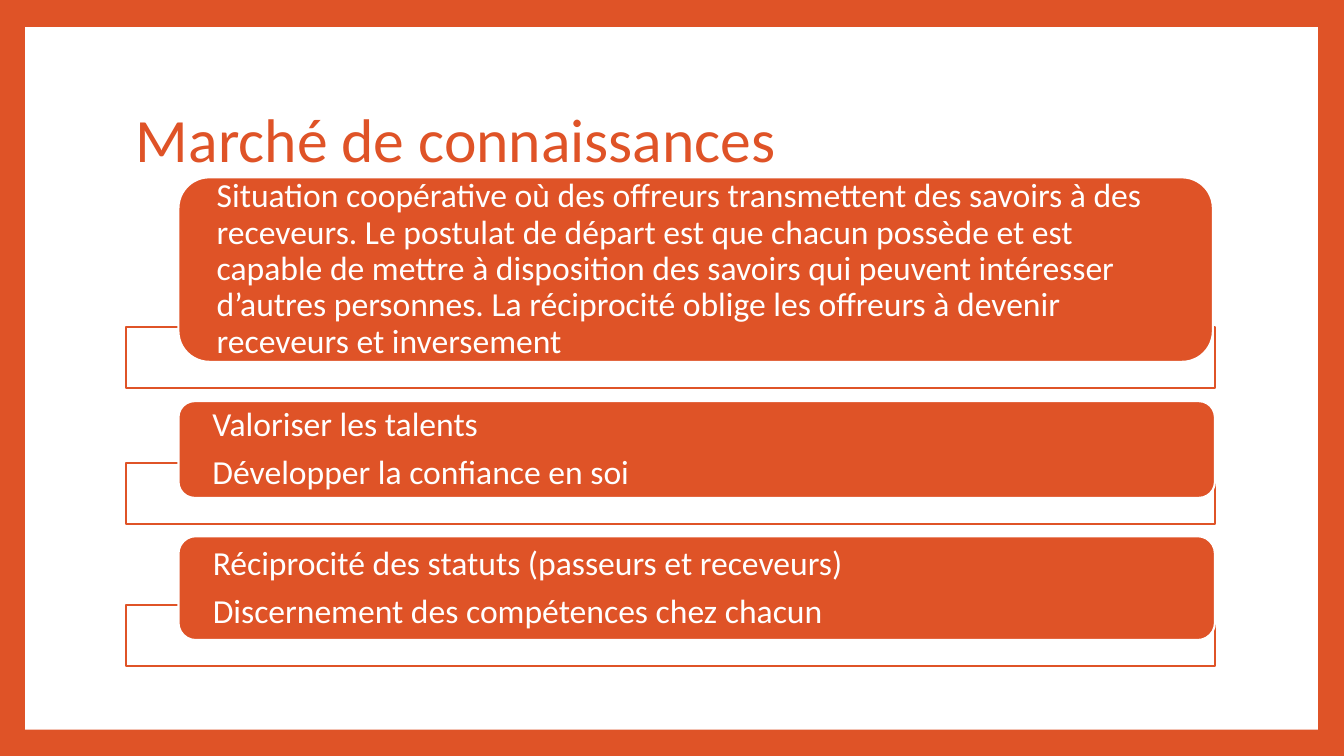
from lxml import etree
from pptx import Presentation
from pptx import util as u
from pptx.dml.color import RGBColor
from pptx.enum import shapes, text
from pptx.oxml.ns import qn

WIDTH, HEIGHT = 13.33, 7.5
ORANGE, WHITE = "DF5327", "FFFFFF"
FONT = "Calibri"
LEFT, CONTENT_WIDTH = 1.25, 10.8
CARD_LEFT = 1.77
TRAY_HEIGHT = 0.61
TRAY_DROP = 0.26  # how far each tray reaches below its card

# Card top, height, width and paragraphs
CARDS = [
    (1.76, 1.83, 10.26, [
        "Situation coopérative où des offreurs transmettent des savoirs à des "
        "receveurs. Le postulat de départ est que chacun possède et est "
        "capable de mettre à disposition des savoirs qui peuvent intéresser "
        "d’autres personnes. La réciprocité oblige les offreurs à devenir "
        "receveurs et inversement"]),
    (3.98, 0.96, 10.28, ["Valoriser les talents",
                         "Développer la confiance en soi"]),
    (5.32, 1.03, 10.28, ["Réciprocité des statuts (passeurs et receveurs)",
                         "Discernement des compétences chez chacun"]),
]


def color(value):
    return RGBColor.from_string(value)


def paint(fill, value):
    fill.solid()
    fill.fore_color.rgb = color(value)


def inches(*lengths):
    return [u.Inches(length) for length in lengths]


def add_block(page, kind, place, fill, line=None):
    block = page.shapes.add_shape(kind, *inches(*place))
    block.shadow.inherit = False
    paint(block.fill, fill)
    if line:
        block.line.color.rgb = color(line)
        block.line.width = u.Pt(1.5)
    else:
        block.line.fill.background()
    return block


def write(box, lines, size, ink, gap=0):
    frame = box.text_frame
    frame.word_wrap = True
    frame.vertical_anchor = text.MSO_ANCHOR.MIDDLE
    for index, line in enumerate(lines):
        para = frame.add_paragraph() if index else frame.paragraphs[0]
        para.text = line
        para.alignment = text.PP_ALIGN.LEFT
        para.line_spacing = 0.9
        para.space_after = u.Pt(gap)
        para.font.name = FONT
        para.font.size = u.Pt(size)
        para.font.color.rgb = color(ink)


def add_tray(page, card_bottom):
    top = card_bottom + TRAY_DROP - TRAY_HEIGHT
    tray = add_block(page, shapes.MSO_SHAPE.RECTANGLE,
                     (LEFT, top, CONTENT_WIDTH, TRAY_HEIGHT), WHITE, ORANGE)
    # Fill at 90 % opacity
    fill_color = tray.fill._xPr.find(qn("a:solidFill"))[0]
    etree.SubElement(fill_color, qn("a:alpha")).set("val", "90000")


def add_card(page, top, height, width, lines):
    card = add_block(page, shapes.MSO_SHAPE.ROUNDED_RECTANGLE,
                     (CARD_LEFT, top, width, height), ORANGE, WHITE)
    frame = card.text_frame
    frame.margin_left = frame.margin_right = u.Inches(0.29)
    frame.margin_top = frame.margin_bottom = 0
    write(card, lines, 24, WHITE, gap=8.4)


def main():
    deck = Presentation()
    deck.slide_width, deck.slide_height = inches(WIDTH, HEIGHT)
    page = deck.slides.add_slide(deck.slide_layouts[6])

    # Orange frame around a white panel
    paint(page.background.fill, ORANGE)
    add_block(page, shapes.MSO_SHAPE.RECTANGLE, (0.25, 0.27, 12.82, 6.97), WHITE)

    # Title
    title = page.shapes.add_textbox(*inches(LEFT, 0.67, CONTENT_WIDTH, 1.48))
    write(title, ["Marché de connaissances"], 44, ORANGE)

    # Cards, each over its tray
    for top, height, width, lines in CARDS:
        add_tray(page, top + height)
        add_card(page, top, height, width, lines)

    deck.save("out.pptx")


if __name__ == "__main__":
    main()
